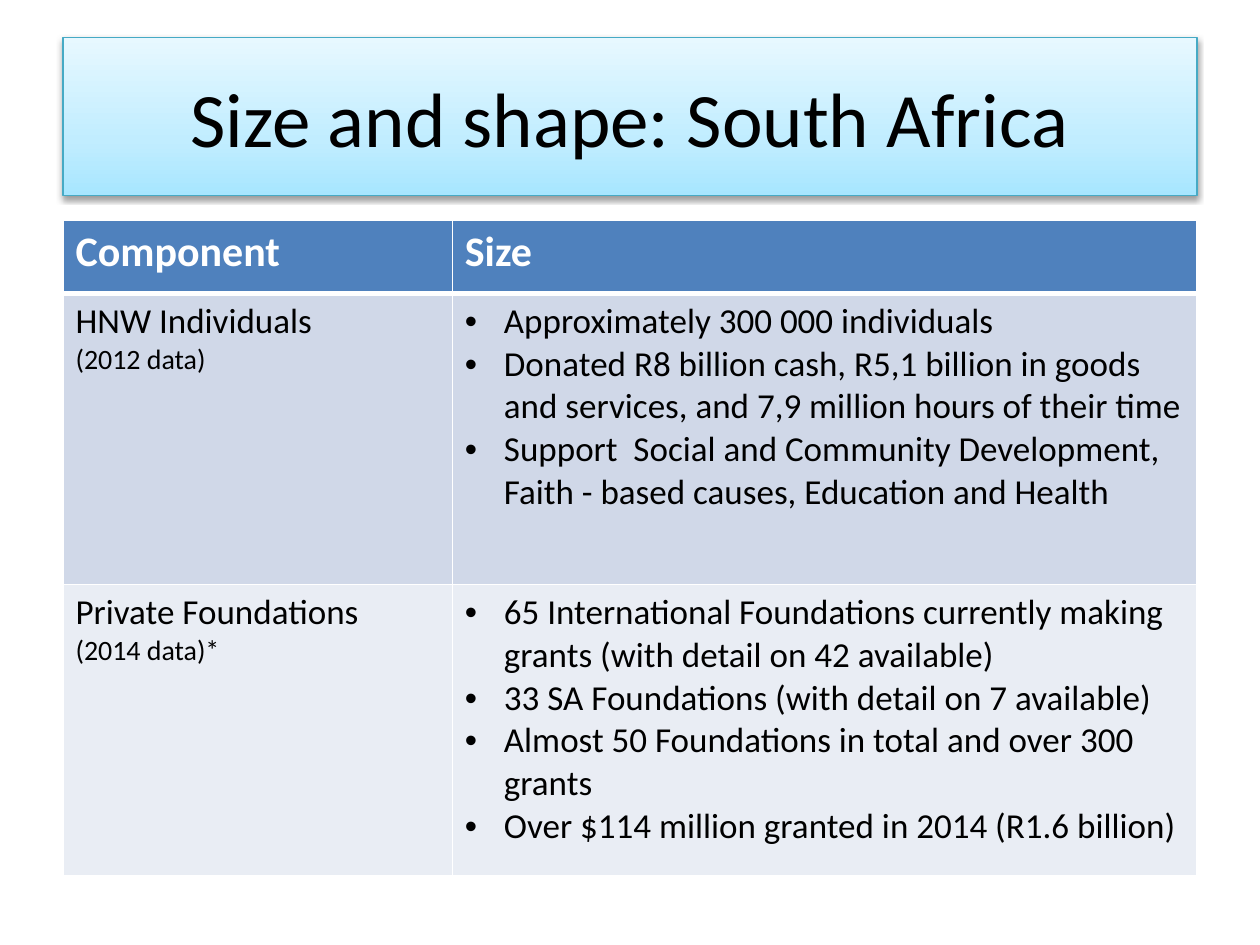
import dataclasses
import copy
import pptx
import pptx.util
import pptx.dml.color
import pptx.enum.text
import pptx.oxml
import pptx.oxml.ns
import pptx.table

Inches = pptx.util.Inches
Pt = pptx.util.Pt
qn = pptx.oxml.ns.qn
NS = pptx.oxml.ns.nsdecls("a")
FONT = "Calibri"
COLORS = {
    "head": "4F81BD", "odd": "D0D8E8", "even": "E9EDF4",
    "white": "FFFFFF", "black": "000000", "edge": "46AAC5",
    "deep": "A7E6FF", "mid": "C1EDFF", "pale": "E7F8FF",
}


@dataclasses.dataclass
class Line:
    text: str
    size: int = 20
    bullet: bool = False


@dataclasses.dataclass
class Row:
    height: float
    fill: str
    cells: list[list[Line]]
    ink: str = "black"
    bold: bool = False
    top: int = 1
    bottom: int = 1


def points(*texts: str) -> list[Line]:
    return [Line(text, bullet=True) for text in texts]


ROWS = [
    Row(0.58, "head", [[Line("Component", 24)], [Line("Size", 24)]],
        ink="white", bold=True, bottom=3),
    Row(2.31, "odd", [
        [Line("HNW Individuals"), Line("(2012 data)", 16)],
        points(
            "Approximately 300 000 individuals",
            "Donated R8 billion cash, R5,1 billion in goods and services, "
            "and 7,9 million hours of their time",
            "Support  Social and Community Development, "
            "Faith - based causes, Education and Health",
        ),
    ], top=3),
    Row(2.31, "even", [
        [Line("Private Foundations"), Line("(2014 data)*", 16)],
        points(
            "65 International Foundations currently making grants "
            "(with detail on 42 available)",
            "33 SA Foundations (with detail on 7 available)",
            "Almost 50 Foundations in total and over 300 grants",
            "Over $114 million granted in 2014 (R1.6 billion)",
        ),
    ]),
]
WIDTHS = [3.09, 5.91]


def color(name: str) -> pptx.dml.color.RGBColor:
    return pptx.dml.color.RGBColor.from_string(COLORS[name])


def style(para, size: int, ink: str, bold: bool = False) -> None:
    para.font.name = FONT
    para.font.size = Pt(size)
    para.font.bold = bold
    para.font.color.rgb = color(ink)


def add_bullet(para) -> None:
    props = para._p.get_or_add_pPr()
    indent = Inches(0.31)
    props.set("marL", str(indent))
    props.set("indent", str(-indent))
    for xml in (f'<a:buFont {NS} typeface="Arial"/>', f'<a:buChar {NS} char="•"/>'):
        props.insert_element_before(pptx.oxml.parse_xml(xml), "a:tabLst", "a:defRPr")


def add_borders(cell: pptx.table._Cell, row: Row) -> None:
    props = cell._tc.get_or_add_tcPr()
    sides = {"lnL": 1, "lnR": 1, "lnT": row.top, "lnB": row.bottom}
    for index, (side, width) in enumerate(sides.items()):
        props.insert(index, pptx.oxml.parse_xml(
            f'<a:{side} {NS} w="{Pt(width)}"><a:solidFill>'
            f'<a:srgbClr val="{COLORS["white"]}"/></a:solidFill></a:{side}>'))


def fill_cell(cell: pptx.table._Cell, lines: list[Line], row: Row) -> None:
    cell.fill.solid()
    cell.fill.fore_color.rgb = color(row.fill)
    add_borders(cell, row)
    frame = cell.text_frame
    for index, line in enumerate(lines):
        para = frame.add_paragraph() if index else frame.paragraphs[0]
        para.text = line.text
        style(para, line.size, row.ink, row.bold)
        if line.bullet:
            add_bullet(para)


def draw_title(slide) -> None:
    title = slide.shapes.title
    title.left, title.top = Inches(0.5), Inches(0.3)
    title.width, title.height = Inches(9), Inches(1.25)
    title.fill.gradient()
    title.fill.gradient_angle = 90
    props = title.element.spPr
    stops = props.find(".//" + qn("a:gsLst"))
    stops.append(copy.deepcopy(stops[-1]))
    shades = [(0, "deep"), (0.35, "mid"), (1, "pale")]
    for stop, (place, name) in zip(title.fill.gradient_stops, shades):
        stop.position = place
        stop.color.rgb = color(name)
    title.line.color.rgb = color("edge")
    title.line.width = Pt(0.75)
    props.append(pptx.oxml.parse_xml(
        f'<a:effectLst {NS}><a:outerShdw blurRad="{Pt(3.1)}" dist="{Pt(1.6)}" '
        f'dir="5400000" rotWithShape="0"><a:srgbClr val="{COLORS["black"]}">'
        '<a:alpha val="38000"/></a:srgbClr></a:outerShdw></a:effectLst>'))
    frame = title.text_frame
    frame.text = "Size and shape: South Africa"
    frame.vertical_anchor = pptx.enum.text.MSO_ANCHOR.MIDDLE
    para = frame.paragraphs[0]
    para.alignment = pptx.enum.text.PP_ALIGN.CENTER
    style(para, 44, "black")


def draw_table(slide) -> None:
    height = sum(row.height for row in ROWS)
    table = slide.shapes.add_table(
        len(ROWS), len(WIDTHS), Inches(0.5), Inches(1.75),
        Inches(sum(WIDTHS)), Inches(height)).table
    table.horz_banding = False
    for column, width in zip(table.columns, WIDTHS):
        column.width = Inches(width)
    for index, row in enumerate(ROWS):
        table.rows[index].height = Inches(row.height)
        for cell, lines in zip(table.rows[index].cells, row.cells):
            fill_cell(cell, lines, row)


def main() -> None:
    deck = pptx.Presentation()
    deck.slide_width, deck.slide_height = Inches(10), Inches(7.5)
    slide = deck.slides.add_slide(deck.slide_layouts[5])
    draw_title(slide)
    draw_table(slide)
    deck.save("out.pptx")


if __name__ == "__main__":
    main()
